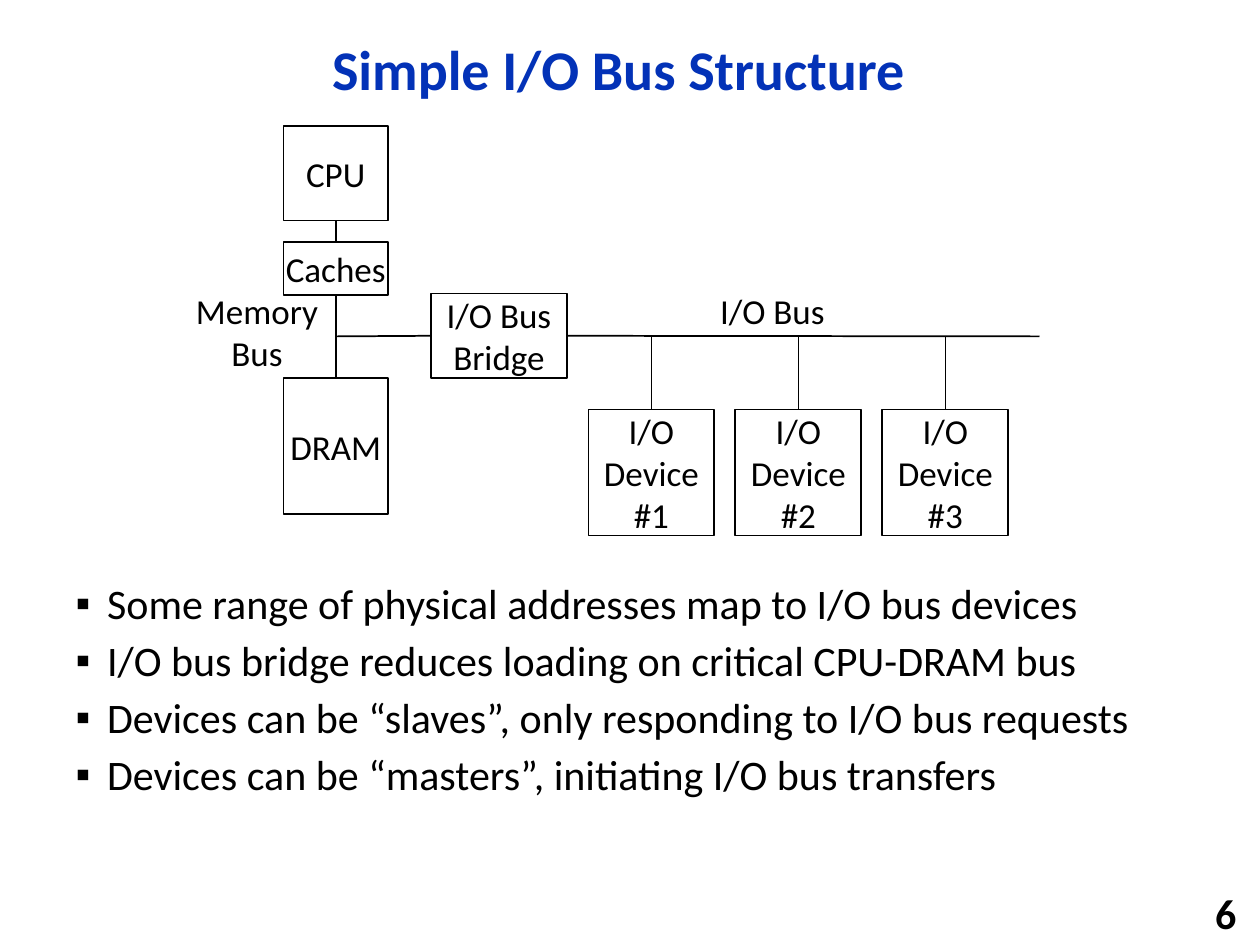
import pptx
import pptx.dml.color
import pptx.enum.shapes
import pptx.enum.text
import pptx.util
from lxml import etree

Inches = pptx.util.Inches
Pt = pptx.util.Pt
Align = pptx.enum.text.PP_ALIGN
Anchor = pptx.enum.text.MSO_ANCHOR
Color = pptx.dml.color.RGBColor

BLUE = Color(0x03, 0x32, 0xB7)
BLACK = Color(0, 0, 0)
WHITE = Color(0xFF, 0xFF, 0xFF)
DRAWING_NS = "{http://schemas.openxmlformats.org/drawingml/2006/main}"
TOP, LEFT, BOTTOM, RIGHT = range(4)
MEMORY_X, BUS_Y, BUS_END = 2.67, 2.67, 8.25
NO_MARGINS = dict.fromkeys(("margin_left", "margin_top", "margin_right", "margin_bottom"), 0)
TITLE_FONT = {"name": "Calibri", "size": Pt(32), "bold": True}
BODY_FONT = {"name": "Calibri", "size": Pt(24), "bold": False}
NUMBER_FONT = {"name": "Calibri", "size": Pt(24), "bold": True}
LABEL_FONT = {"name": "Calibri", "size": Pt(20), "bold": False}
POINTS = (
    "Some range of physical addresses map to I/O bus devices",
    "I/O bus bridge reduces loading on critical CPU-DRAM bus",
    "Devices can be “slaves”, only responding to I/O bus requests",
    "Devices can be “masters”, initiating I/O bus transfers",
)


def apply(target, values):
    """Set every attribute named in a dict of format values."""
    for attribute, value in values.items():
        setattr(target, attribute, value)


def place(shape, box):
    """Move and size a shape, in inches."""
    apply(shape, dict(zip(("left", "top", "width", "height"), map(Inches, box))))


def write(paragraph, text, font, color=BLACK, **layout):
    """Fill a paragraph with one formatted run."""
    run = paragraph.add_run()
    run.text = text
    apply(run.font, font)
    run.font.color.rgb = color
    apply(paragraph, layout)


def add_title(slide, text):
    """Fill the title placeholder."""
    title = slide.shapes.title
    place(title, (0.92, 0.17, 7.98, 0.81))
    apply(title.text_frame, {"vertical_anchor": Anchor.MIDDLE, "word_wrap": True})
    write(title.text_frame.paragraphs[0], text, TITLE_FONT, BLUE,
          alignment=Align.CENTER, line_spacing=0.9)


def add_bullets(slide, points):
    """Fill the body placeholder with square bullets."""
    body = slide.placeholders[1]
    place(body, (0.5, 4.58, 9.08, 2.36))
    frame = body.text_frame
    frame.auto_size = pptx.enum.text.MSO_AUTO_SIZE.NONE
    for index, point in enumerate(points):
        paragraph = frame.add_paragraph() if index else frame.paragraphs[0]
        write(paragraph, point, BODY_FONT, line_spacing=0.9, space_before=Pt(6.6))
        properties = paragraph._p.get_or_add_pPr()
        properties.set("marL", str(Inches(0.25)))
        properties.set("indent", str(Inches(-0.25)))
        etree.SubElement(properties, DRAWING_NS + "buChar", char="▪")


def add_label(slide, text, box, font=LABEL_FONT, alignment=Align.CENTER, anchor=Anchor.TOP):
    """Add free-standing wrapped text."""
    label = slide.shapes.add_textbox(*map(Inches, box))
    apply(label.text_frame, {"word_wrap": True, "vertical_anchor": anchor})
    write(label.text_frame.paragraphs[0], text, font, alignment=alignment)


def add_unit(slide, text, box):
    """Add an outlined hardware unit with a centred name."""
    unit = slide.shapes.add_shape(pptx.enum.shapes.MSO_SHAPE.RECTANGLE, *map(Inches, box))
    unit.shadow.inherit = False
    unit.fill.solid()
    unit.fill.fore_color.rgb = WHITE
    unit.line.color.rgb = BLACK
    unit.line.width = Pt(1)
    apply(unit.text_frame, {"word_wrap": True, "vertical_anchor": Anchor.MIDDLE, **NO_MARGINS})
    write(unit.text_frame.paragraphs[0], text, LABEL_FONT, alignment=Align.CENTER)
    return unit


def add_wire(slide, start, end, begin_joint=None, end_joint=None):
    """Add a straight wire, joined to (unit, side) pairs where given."""
    wire = slide.shapes.add_connector(
        pptx.enum.shapes.MSO_CONNECTOR.STRAIGHT, *map(Inches, start + end))
    wire.line.color.rgb = BLACK
    wire.line.width = Pt(1)
    etree.SubElement(wire._element.spPr, DRAWING_NS + "effectLst")
    if begin_joint:
        wire.begin_connect(*begin_joint)
    if end_joint:
        wire.end_connect(*end_joint)


def add_memory_side(slide):
    """Draw the processor, caches and memory on the memory bus."""
    cpu = add_unit(slide, "CPU", (2.25, 1, 0.83, 0.75))
    caches = add_unit(slide, "Caches", (2.25, 1.92, 0.83, 0.42))
    dram = add_unit(slide, "DRAM", (2.25, 3, 0.83, 1.08))
    add_wire(slide, (MEMORY_X, 1.75), (MEMORY_X, 1.92), (cpu, BOTTOM), (caches, TOP))
    add_wire(slide, (MEMORY_X, 2.33), (MEMORY_X, 3), (caches, BOTTOM), (dram, TOP))
    add_label(slide, "Memory Bus", (1.33, 2.25, 1.42, 0.77))


def add_io_side(slide):
    """Draw the bridge, the I/O bus and its devices."""
    bridge = add_unit(slide, "I/O Bus Bridge", (3.42, 2.33, 1.08, 0.67))
    add_wire(slide, (MEMORY_X, BUS_Y), (3.42, BUS_Y), end_joint=(bridge, LEFT))
    add_wire(slide, (4.5, BUS_Y), (BUS_END, BUS_Y), begin_joint=(bridge, RIGHT))
    add_label(slide, "I/O Bus", (5.42, 2.25, 1.42, 0.44))
    for index in range(3):
        left = 4.67 + index * 3.5 / 3
        device = add_unit(slide, f"I/O Device #{index + 1}", (left, 3.25, 1, 1))
        add_wire(slide, (left + 0.5, 3.25), (left + 0.5, BUS_Y), begin_joint=(device, TOP))


def main():
    """Build and save the slide."""
    deck = pptx.Presentation()
    apply(deck, {"slide_width": Inches(10), "slide_height": Inches(7.5)})
    slide = deck.slides.add_slide(deck.slide_layouts[1])
    add_title(slide, "Simple I/O Bus Structure")
    add_bullets(slide, POINTS)
    add_label(slide, "6", (7.83, 7.08, 2.08, 0.32), NUMBER_FONT, Align.RIGHT, Anchor.MIDDLE)
    add_memory_side(slide)
    add_io_side(slide)
    deck.save("out.pptx")


if __name__ == "__main__":
    main()
